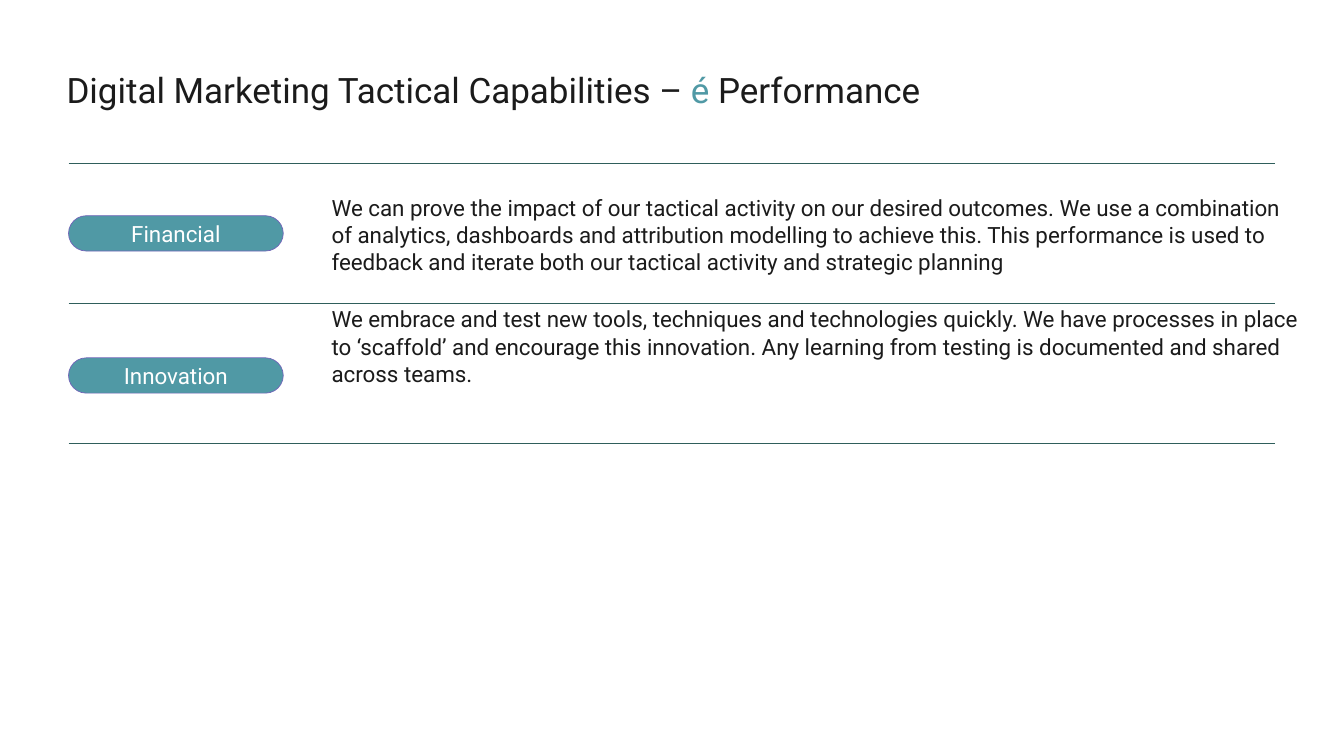
from lxml.etree import SubElement
from pptx import Presentation
from pptx.dml.color import RGBColor
from pptx.enum.shapes import MSO_CONNECTOR, MSO_SHAPE
from pptx.enum.text import MSO_ANCHOR, PP_ALIGN
from pptx.oxml.ns import qn
from pptx.util import Inches, Pt


def paint(code):
    return RGBColor.from_string(code)


def write(shape, text, size=16, color="1B1B1B", align=PP_ALIGN.LEFT,
          anchor=MSO_ANCHOR.MIDDLE, space=1, before=0):
    frame = shape.text_frame
    frame.word_wrap = True
    frame.vertical_anchor = anchor
    para = frame.paragraphs[0]
    para.alignment = align
    para.line_spacing = space
    para.space_before = Pt(before)
    run = para.add_run()
    run.text = text
    run.font.name = "Roboto"
    run.font.size = Pt(size)
    run.font.color.rgb = paint(color)


deck = Presentation()
deck.slide_width = Inches(13.33)
deck.slide_height = Inches(7.5)
slide = deck.slides.add_slide(deck.slide_layouts[5])
shapes = slide.shapes

title = shapes.title
title.left, title.top = Inches(0.56), Inches(0.69)
title.width, title.height = Inches(10.53), Inches(0.45)
parts = [
    ("Digital Marketing Tactical Capabilities – ", "1B1B1B"),
    ("é", "5099A5"),
    (" Performance", "1B1B1B"),
]
for text, color in parts:
    write(title, text, size=25, color=color, space=0.9)

for row in range(3):
    y = Inches(1.62 + 1.39 * row)
    rule = shapes.add_connector(
        MSO_CONNECTOR.STRAIGHT, Inches(0.68), y, Inches(12.65), y)
    rule.line.color.rgb = paint("2F5E5B")
    rule.line.width = Pt(0.5)
    SubElement(rule.element.spPr, qn("a:effectLst"))

rows = [
    ("Financial", 2.14, 1.91, 1.01, 2.3,
     "We can prove the impact of our tactical activity on our desired outcomes. "
     "We use a combination of analytics, dashboards and attribution modelling to "
     "achieve this. This performance is used to feedback and iterate both our "
     "tactical activity and strategic planning"),
    ("Innovation", 3.55, 3.01, 1.03, 2.1,
     "We embrace and test new tools, techniques and technologies quickly. We have "
     "processes in place to ‘scaffold’ and encourage this innovation. Any learning "
     "from testing is documented and shared across teams."),
]
for name, y, top, space, before, text in rows:
    pill = shapes.add_shape(
        MSO_SHAPE.ROUNDED_RECTANGLE, Inches(0.68), Inches(y), Inches(2.13), Inches(0.35))
    pill.adjustments[0] = 0.5
    pill.shadow.inherit = False
    pill.fill.solid()
    pill.fill.fore_color.rgb = paint("5099A5")
    pill.line.color.rgb = paint("7164B9")
    pill.line.width = Pt(0.5)
    write(pill, name, color="FFFFFF", align=PP_ALIGN.CENTER)

    box = shapes.add_textbox(Inches(3.19), Inches(top), Inches(9.74), Inches(0.82))
    frame = box.text_frame
    frame.margin_left, frame.margin_top = Inches(0.1), Inches(0.01)
    frame.margin_right = frame.margin_bottom = 0
    write(box, text, anchor=MSO_ANCHOR.TOP, space=space, before=before)

deck.save("out.pptx")
